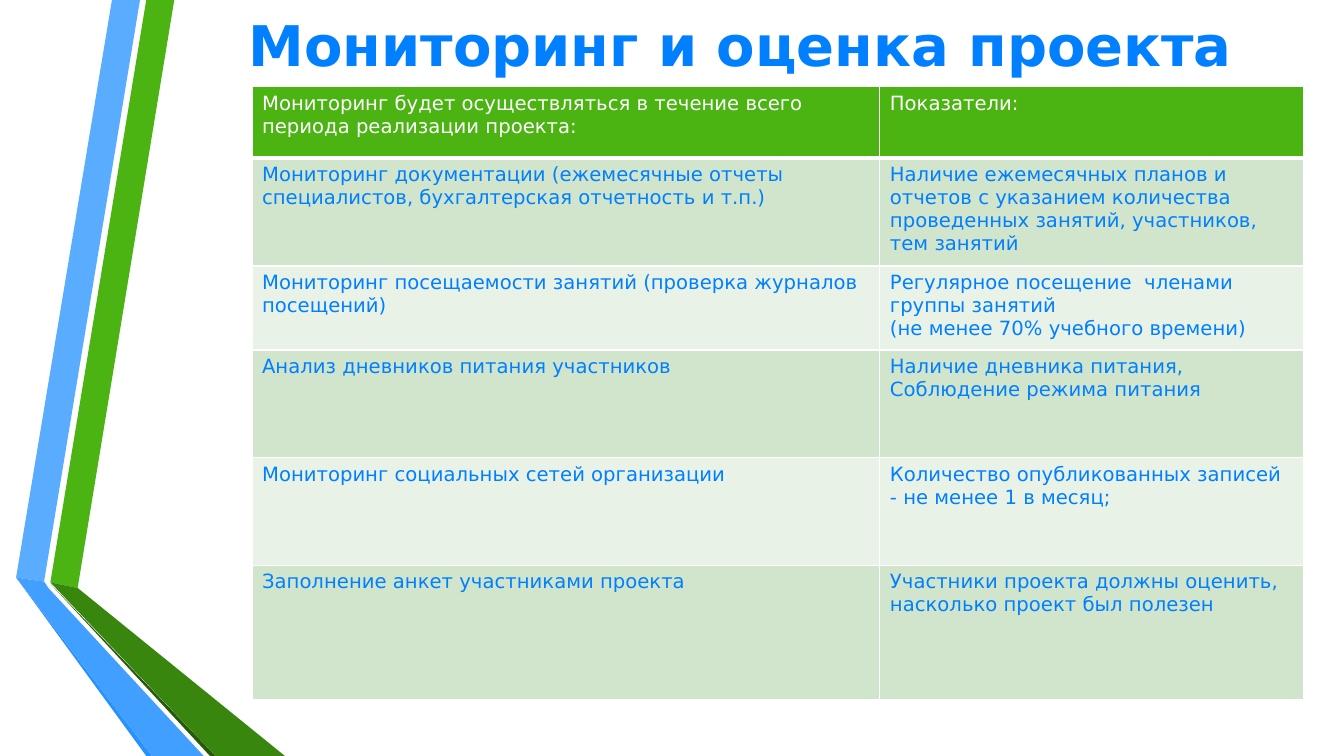
import pptx
import pptx.dml.color
import pptx.enum.text
import pptx.oxml
import pptx.oxml.ns
import pptx.util

Pt = pptx.util.Pt
FONT = "DejaVu Sans"
WHITE, BLUE, GREEN = "FFFFFF", "007FFF", "4BB312"
BANDS = ["D0E5CC", "E9F2E7"]

RIBBONS = [
    (GREEN, [(24.5, 416), (44, 420), (113, 0), (93, 0)]),
    ("59ACFF", [(88.5, 0), (68.5, 0), (0, 412.5), (20, 415.5)]),
    ("2692FF", [(0, 412.5), (93, 540), (97, 540)]),
    ("265909", [(24.5, 417), (138.5, 540), (142.5, 540)]),
    ("38860E", [(24.5, 416), (142.5, 540), (192, 540), (44, 420)]),
    ("409FFF", [(0, 412.5), (97, 540), (134, 540), (23, 420), (20, 415.5)]),
]

COLUMN_WIDTHS = [448.5, 302.5]
ROW_HEIGHTS = [51, 77, 60, 77, 77, 96]
MONITORING = [
    (["Мониторинг будет осуществляться в течение всего периода реализации проекта:"],
     ["Показатели:"]),
    (["Мониторинг документации (ежемесячные отчеты специалистов, бухгалтерская отчетность и т.п.)"],
     ["Наличие ежемесячных планов и  отчетов с указанием количества проведенных занятий, участников, тем занятий"]),
    (["Мониторинг посещаемости занятий (проверка журналов посещений)"],
     ["Регулярное посещение  членами группы занятий ", "(не менее 70% учебного времени)"]),
    (["Анализ дневников питания участников"],
     ["Наличие дневника питания,", "Соблюдение режима питания"]),
    (["Мониторинг социальных сетей организации"],
     ["Количество опубликованных записей - не менее 1 в месяц;"]),
    (["Заполнение анкет участниками проекта"],
     ["Участники проекта должны оценить, насколько проект был полезен "]),
]


def rgb(value):
    """Return the colour for a hex string."""
    return pptx.dml.color.RGBColor.from_string(value)


def add_run(paragraph, text, size, color, bold=False):
    """Append one formatted run to a paragraph."""
    run = paragraph.add_run()
    run.text = text
    run.font.name = FONT
    run.font.size = Pt(size)
    run.font.bold = bold
    run.font.color.rgb = rgb(color)


def set_borders(cell, widths):
    """Draw white cell borders from a mapping of side to width."""
    properties = cell._tc.get_or_add_tcPr()
    for index, (side, width) in enumerate(widths.items()):
        border = pptx.oxml.parse_xml(
            f'<a:ln{side} {pptx.oxml.ns.nsdecls("a")} w="{Pt(width)}">'
            f'<a:solidFill><a:srgbClr val="{WHITE}"/></a:solidFill></a:ln{side}>')
        properties.insert(index, border)


def add_ribbons(slide, left, top):
    """Draw the folded ribbons from the given corner."""
    for color, points in RIBBONS:
        corners = [(Pt(left + x), Pt(top + y)) for x, y in points]
        builder = slide.shapes.build_freeform(*corners[0])
        builder.add_line_segments(corners[1:], close=True)
        ribbon = builder.convert_to_shape()
        ribbon.shadow.inherit = False
        ribbon.fill.solid()
        ribbon.fill.fore_color.rgb = rgb(color)
        ribbon.line.fill.background()


def add_heading(slide, left, top, width, height):
    """Place the slide title in the given box."""
    heading = slide.shapes.title
    heading.left, heading.top = Pt(left), Pt(top)
    heading.width, heading.height = Pt(width), Pt(height)
    frame = heading.text_frame
    frame.word_wrap = True
    frame.auto_size = pptx.enum.text.MSO_AUTO_SIZE.NONE
    frame.vertical_anchor = pptx.enum.text.MSO_ANCHOR.MIDDLE
    paragraph = frame.paragraphs[0]
    paragraph.alignment = pptx.enum.text.PP_ALIGN.CENTER
    paragraph.space_before, paragraph.space_after = Pt(8), Pt(6)
    add_run(paragraph, "Мониторинг и оценка проекта ", 40, BLUE, bold=True)


def add_monitoring_table(slide, left, top):
    """Build the table of monitoring methods and indicators."""
    table = slide.shapes.add_table(
        len(ROW_HEIGHTS), len(COLUMN_WIDTHS), Pt(left), Pt(top),
        Pt(sum(COLUMN_WIDTHS)), Pt(sum(ROW_HEIGHTS))).table
    for column, width in zip(table.columns, COLUMN_WIDTHS):
        column.width = Pt(width)
    for index, (row, height, texts) in enumerate(zip(table.rows, ROW_HEIGHTS, MONITORING)):
        row.height = Pt(height)
        header = index == 0
        for cell, lines in zip(row.cells, texts):
            cell.fill.solid()
            cell.fill.fore_color.rgb = rgb(GREEN if header else BANDS[(index - 1) % 2])
            set_borders(cell, {"L": 1, "R": 1, "T": 3 if index == 1 else 1,
                               "B": 3 if header else 1})
            for number, line in enumerate(lines):
                frame = cell.text_frame
                paragraph = frame.add_paragraph() if number else frame.paragraphs[0]
                add_run(paragraph, line, 14, WHITE if header else BLUE)


def main():
    """Build and save the slide."""
    deck = pptx.Presentation()
    deck.slide_width, deck.slide_height = Pt(960), Pt(540)
    slide = deck.slides.add_slide(deck.slide_layouts[5])
    add_ribbons(slide, 11.5, 0)
    add_heading(slide, 150.5, -18.5, 770.5, 100)
    add_monitoring_table(slide, 180, 62)
    deck.save("out.pptx")


if __name__ == "__main__":
    main()
